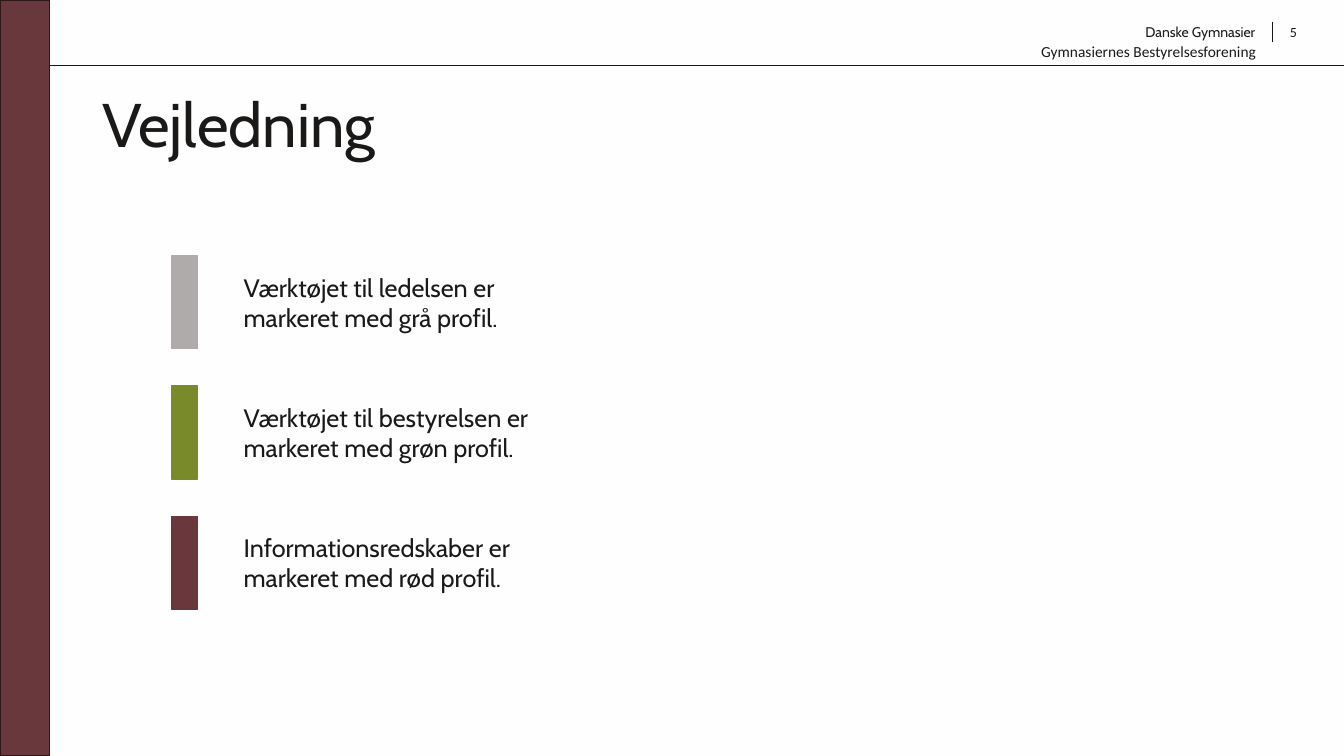
from collections import namedtuple
from dataclasses import dataclass

from lxml.etree import SubElement
from pptx import Presentation
from pptx.dml.color import RGBColor
from pptx.enum.shapes import MSO_CONNECTOR, MSO_SHAPE
from pptx.enum.text import MSO_ANCHOR, PP_ALIGN
from pptx.oxml.ns import qn
from pptx.util import Cm, Pt

Box = namedtuple("Box", "left top width height")


@dataclass(frozen=True)
class Theme:
    background: str = "FFFEFE"
    ink: str = "1A1918"
    red: str = "68383C"
    red_edge: str = "2E191A"
    grey: str = "AFABAB"
    green: str = "788A2A"
    heading_font: str = "Cabin"
    small_font: str = "Calibri"
    title_size: int = 44
    body_size: int = 18
    subheader_size: int = 11
    header_size: int = 10


THEME = Theme()
PAGE = Box(0, 0, 33.87, 19.05)
BAND_WIDTH = 1.25

PROFILES = [
    (THEME.grey, "Værktøjet til ledelsen er markeret med grå profil."),
    (THEME.green, "Værktøjet til bestyrelsen er markeret med grøn profil."),
    (THEME.red, "Informationsredskaber er markeret med rød profil."),
]


def lengths(box):
    return [Cm(value) for value in box]


def add_text(page, box, text, size, name=THEME.heading_font,
             anchor=MSO_ANCHOR.TOP, **paragraph_format):
    frame = page.shapes.add_textbox(*lengths(box)).text_frame
    frame.word_wrap = True
    frame.vertical_anchor = anchor
    para = frame.paragraphs[0]
    for attribute, value in paragraph_format.items():
        setattr(para, attribute, value)
    span = para.add_run()
    span.text = text
    for attribute, value in {"name": name, "size": Pt(size)}.items():
        setattr(span.font, attribute, value)
    span.font.color.rgb = RGBColor.from_string(THEME.ink)


def add_bar(page, box, fill, edge):
    bar = page.shapes.add_shape(MSO_SHAPE.RECTANGLE, *lengths(box))
    bar.shadow.inherit = False
    bar.fill.solid()
    bar.fill.fore_color.rgb = RGBColor.from_string(fill)
    bar.line.color.rgb = RGBColor.from_string(edge)
    bar.line.width = Pt(1)


def add_rule(page, start, end, width):
    rule = page.shapes.add_connector(
        MSO_CONNECTOR.STRAIGHT, *lengths(start + end))
    rule.line.color.rgb = RGBColor.from_string(THEME.ink)
    rule.line.width = Pt(width)
    SubElement(rule._element.spPr, qn("a:effectLst"))


def draw_header(page, box):
    right, bottom = box.left + box.width, box.top + box.height
    divider = right - 1.81
    add_rule(page, (box.left, bottom), (right, bottom), 0.5)
    add_rule(page, (divider, box.top + 0.56), (divider, box.top + 1.07), 0.75)
    # Sender names and page number
    add_text(page, Box(right - 5.8, box.top + 0.46, 3.81, 0.69),
             "Danske Gymnasier", THEME.header_size, alignment=PP_ALIGN.RIGHT)
    add_text(page, Box(right - 7.88, box.top + 0.94, 6.27, 0.74),
             "Gymnasiernes Bestyrelsesforening", THEME.subheader_size,
             THEME.small_font)
    add_text(page, Box(right - 1.61, box.top + 0.46, 1.24, 1.02),
             "5", THEME.header_size, THEME.small_font)


def draw_profiles(page, box):
    gap = 0.94
    row_height = (box.height - gap * (len(PROFILES) - 1)) / len(PROFILES)
    bar_width, text_offset = 0.66, 1.57
    for index, (colour, text) in enumerate(PROFILES):
        top = box.top + index * (row_height + gap)
        add_bar(page, Box(box.left, top, bar_width, row_height), colour, colour)
        add_text(page, Box(box.left + text_offset, top,
                           box.width - text_offset, row_height),
                 text, THEME.body_size, anchor=MSO_ANCHOR.MIDDLE)


def draw_guide(page, box):
    page.background.fill.solid()
    page.background.fill.fore_color.rgb = RGBColor.from_string(THEME.background)
    # Header strip, then the side band on top of its rule
    draw_header(page, box._replace(height=1.65))
    add_bar(page, box._replace(width=BAND_WIDTH), THEME.red, THEME.red_edge)
    # Title
    add_text(page, Box(box.left + 2.33, box.top + 2.26, 29.21, 3.68),
             "Vejledning", THEME.title_size, line_spacing=0.9)
    # Colour key
    draw_profiles(page, Box(box.left + 4.32, box.top + 6.45, 10.79, 8.9))


def main():
    deck = Presentation()
    deck.slide_width, deck.slide_height = Cm(PAGE.width), Cm(PAGE.height)
    page = deck.slides.add_slide(deck.slide_layouts[6])
    draw_guide(page, PAGE)
    deck.save("out.pptx")


if __name__ == "__main__":
    main()
